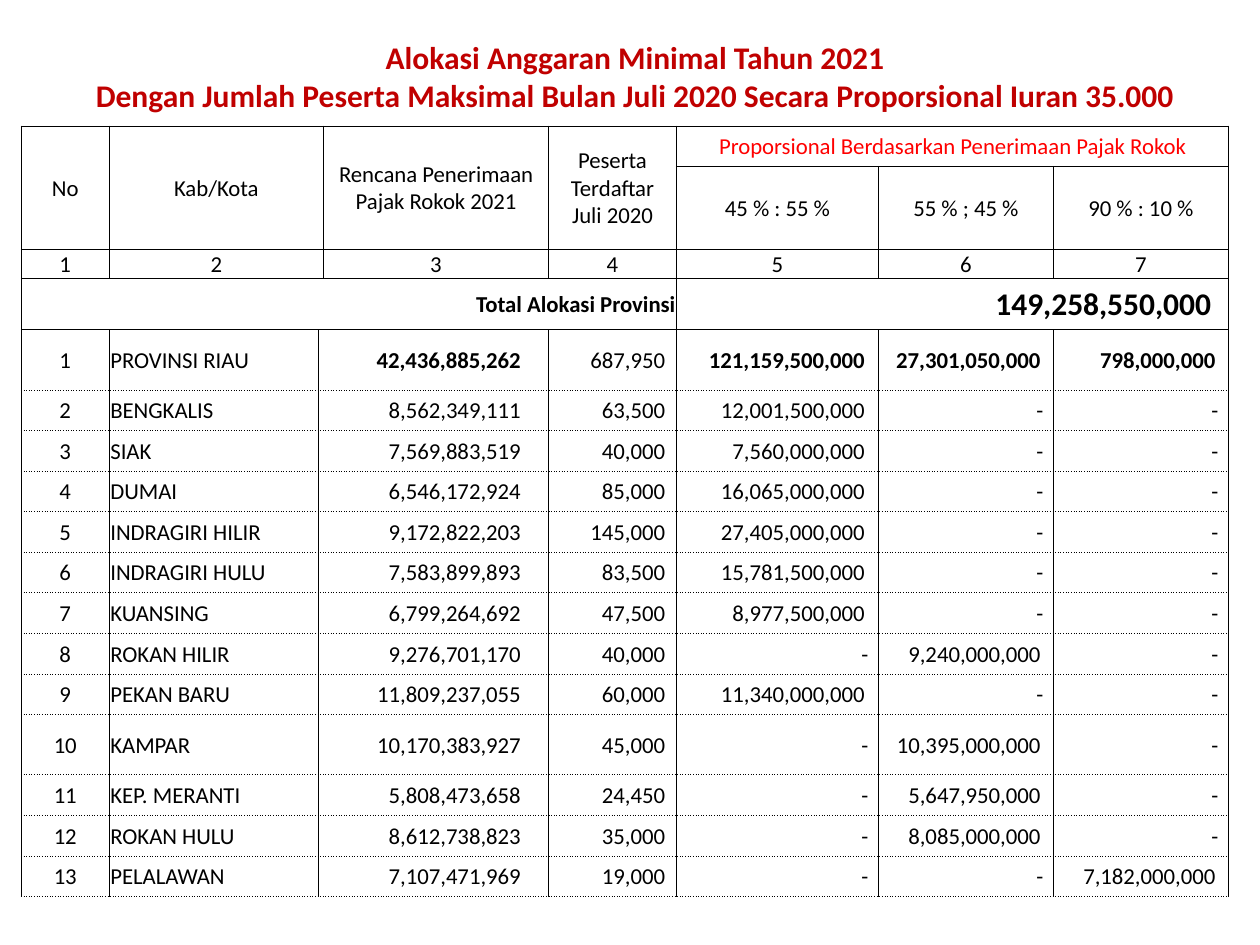
"""Build the slide with the 2021 minimum budget allocation table."""
from lxml import etree
from pptx import Presentation
from pptx.dml.color import RGBColor
from pptx.enum.text import MSO_ANCHOR, MSO_AUTO_SIZE, PP_ALIGN
from pptx.oxml.ns import qn
from pptx.util import Pt

LEFT, MID, RIGHT = PP_ALIGN.LEFT, PP_ALIGN.CENTER, PP_ALIGN.RIGHT
CENTRE = MSO_ANCHOR.MIDDLE
GROW = MSO_AUTO_SIZE.SHAPE_TO_FIT_TEXT
THEME = {
    "font": "Calibri", "title": "C00000", "text": "000000", "alert": "FF0000",
    "line": "000000", "big": 18, "small": 13, "rule": 0.5, "pad": 0.7,
}


def write(frame, text, align=MID, size="small", color="text", bold=False):
    frame.text = text
    for para in frame.paragraphs:
        para.alignment = align
        para.font.name = THEME["font"]
        para.font.size = Pt(THEME[size])
        para.font.bold = bold
        para.font.color.rgb = RGBColor.from_string(THEME[color])


def edge(cell, side, dash="solid"):
    line = etree.SubElement(cell._tc.get_or_add_tcPr(), qn(f"a:ln{side}"))
    line.set("w", str(Pt(THEME["rule"])))
    if dash == "none":
        etree.SubElement(line, qn("a:noFill"))
        return
    fill = etree.SubElement(line, qn("a:solidFill"))
    etree.SubElement(fill, qn("a:srgbClr")).set("val", THEME["line"])
    etree.SubElement(line, qn("a:prstDash")).set("val", dash)


deck = Presentation()
deck.slide_width, deck.slide_height = Pt(720), Pt(540)
slide = deck.slides.add_slide(deck.slide_layouts[6])

title = slide.shapes.add_textbox(Pt(24), Pt(18), Pt(678), Pt(51)).text_frame
title.word_wrap = True
title.auto_size = GROW
write(title, "Alokasi Anggaran Minimal Tahun 2021\n"
      "Dengan Jumlah Peserta Maksimal Bulan Juli 2020 Secara Proporsional Iuran 35.000",
      size="big", color="title", bold=True)

areas = [
    ("PROVINSI RIAU", "42,436,885,262", "687,950", "121,159,500,000", "27,301,050,000", "798,000,000"),
    ("BENGKALIS", "8,562,349,111", "63,500", "12,001,500,000", "-", "-"),
    ("SIAK", "7,569,883,519", "40,000", "7,560,000,000", "-", "-"),
    ("DUMAI", "6,546,172,924", "85,000", "16,065,000,000", "-", "-"),
    ("INDRAGIRI HILIR", "9,172,822,203", "145,000", "27,405,000,000", "-", "-"),
    ("INDRAGIRI HULU", "7,583,899,893", "83,500", "15,781,500,000", "-", "-"),
    ("KUANSING", "6,799,264,692", "47,500", "8,977,500,000", "-", "-"),
    ("ROKAN HILIR", "9,276,701,170", "40,000", "-", "9,240,000,000", "-"),
    ("PEKAN BARU", "11,809,237,055", "60,000", "11,340,000,000", "-", "-"),
    ("KAMPAR", "10,170,383,927", "45,000", "-", "10,395,000,000", "-"),
    ("KEP. MERANTI", "5,808,473,658", "24,450", "-", "5,647,950,000", "-"),
    ("ROKAN HULU", "8,612,738,823", "35,000", "-", "8,085,000,000", "-"),
    ("PELALAWAN", "7,107,471,969", "19,000", "-", "-", "7,182,000,000"),
]
widths = [50.2, 119.6, 2.9, 128.6, 73.1, 115.4, 100, 100]
tall = ("PROVINSI RIAU", "KAMPAR")
heights = [23, 22.3, 13, 29.6] + [34.4 if area[0] in tall else 23.2 for area in areas]
first = len(heights) - len(areas)

table = slide.shapes.add_table(
    len(heights), len(widths), Pt(12.2), Pt(72), Pt(sum(widths)), Pt(sum(heights))).table
table.first_row = table.horz_banding = False
for col, width in zip(table.columns, widths):
    col.width = Pt(width)
for row, height in zip(table.rows, heights):
    row.height = Pt(height)

for row in range(len(heights)):
    for col in range(len(widths)):
        cell = table.cell(row, col)
        cell.vertical_anchor = CENTRE
        cell.margin_left = cell.margin_right = cell.margin_top = Pt(THEME["pad"])
        cell.margin_bottom = 0
        edge(cell, "L")
        edge(cell, "R", "none" if row == 0 and col == len(widths) - 1 else "solid")
        edge(cell, "T", "dot" if row > first else "solid")
        edge(cell, "B", "dot" if row >= first else "solid")
        cell.fill.background()

spans = [(0, 0, 1, 0), (0, 1, 1, 2), (0, 3, 1, 3), (0, 4, 1, 4), (0, 5, 0, 7),
         (2, 1, 2, 2), (3, 0, 3, 4), (3, 5, 3, 7)]
spans += [(row, 2, row, 3) for row in range(first, len(heights))]
for top, left, low, right in spans:
    table.cell(top, left).merge(table.cell(low, right))

heads = [(0, 0, "No"), (0, 1, "Kab/Kota"), (0, 3, "Rencana Penerimaan Pajak Rokok 2021"),
         (0, 4, "Peserta Terdaftar\nJuli 2020"),
         (1, 5, "45 % : 55 %"), (1, 6, "55 % ; 45 %"), (1, 7, "90 % : 10 %")]
heads += [(2, col, str(num)) for num, col in enumerate((0, 1, 3, 4, 5, 6, 7), 1)]
for row, col, text in heads:
    write(table.cell(row, col).text_frame, text)
write(table.cell(0, 5).text_frame, "Proporsional Berdasarkan Penerimaan Pajak Rokok", color="alert")

write(table.cell(3, 0).text_frame, "Total Alokasi Provinsi", RIGHT, bold=True)
total = table.cell(3, 5)
total.margin_right = Pt(9.7)
write(total.text_frame, "149,258,550,000", RIGHT, "big", bold=True)

slots = [(2, 16), (4, 6.5), (5, 8), (6, 7.5), (7, 7.5)]
for num, (name, *sums) in enumerate(areas, 1):
    row = first + num - 1
    write(table.cell(row, 0).text_frame, str(num))
    write(table.cell(row, 1).text_frame, name, LEFT)
    for (col, pad), text in zip(slots, sums):
        cell = table.cell(row, col)
        cell.margin_right = Pt(5.7 if text == "-" else pad)
        write(cell.text_frame, text, RIGHT, bold=num == 1 and col != 4)

deck.save("out.pptx")
